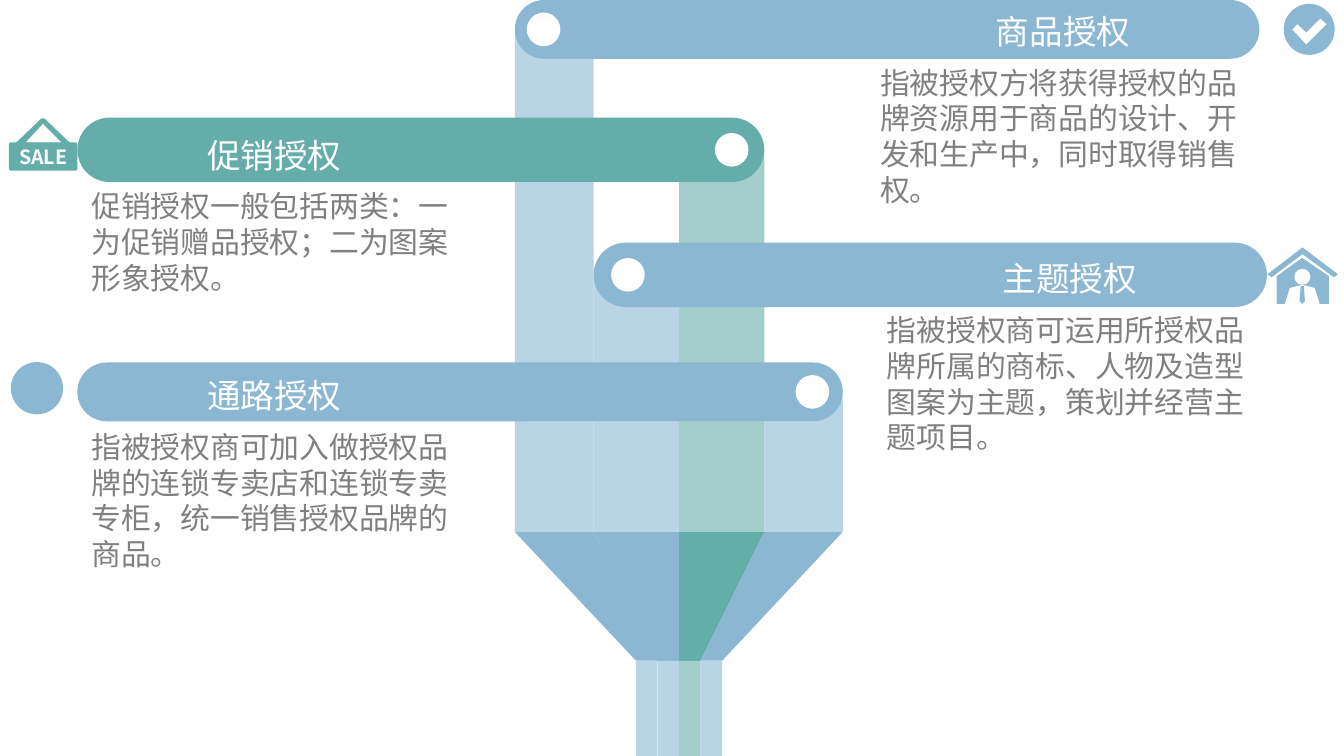
import pptx
import pptx.dml.color
import pptx.enum.shapes
import pptx.enum.text
import pptx.oxml.ns
import pptx.util
from lxml import etree

Pt = pptx.util.Pt
RGBColor = pptx.dml.color.RGBColor
KIND = pptx.enum.shapes.MSO_SHAPE
ANCHOR = pptx.enum.text.MSO_ANCHOR
ALIGN = pptx.enum.text.PP_ALIGN

BLUE = RGBColor(0x8B, 0xB7, 0xD3)
PALE_BLUE = RGBColor(0xB9, 0xD4, 0xE5)
GREEN = RGBColor(0x65, 0xAD, 0xA9)
PALE_GREEN = RGBColor(0xA3, 0xCE, 0xCB)
GREY = RGBColor(0x80, 0x80, 0x80)
WHITE = RGBColor(0xFF, 0xFF, 0xFF)
FONT = "Noto Sans CJK SC"

HEADING = {"name": FONT, "size": Pt(18)}
BODY = {"name": FONT, "size": Pt(16)}
SIGN = {"name": FONT, "size": Pt(10.5), "bold": True}

# Funnel geometry
COLUMN_EDGES = [275.8, 318, 363.8, 409.5, 451.5]
COLUMN_TOPS = [0, 130.3, 63.4, 194.4]
COLUMN_COLORS = [PALE_BLUE, PALE_BLUE, PALE_GREEN, PALE_BLUE]
MOUTH, NECK, BOTTOM = 285, 354, 405
STEM_LEFT, STEM_WIDTH = 340.7, 11.55

# Bars: left, top, width, height, color, dot left
BARS = [
    (275.8, 0, 398.9, 31.5, BLUE, 282.2),
    (41.4, 194.2, 410.1, 31.5, BLUE, 426.2),
    (41.5, 63, 368, 34.5, GREEN, 383),
    (318, 130, 360.7, 34.5, BLUE, 327.4),
]

# Sections: left, heading top, heading, description
SECTIONS = [
    (41.8, 67, "促销授权", "促销授权一般包括两类：一为促销赠品授权；二为图案形象授权。"),
    (41.8, 195.8, "通路授权",
     "指被授权商可加入做授权品牌的连锁专卖店和连锁专卖专柜，统一销售授权品牌的商品。"),
    (464.4, 0.7, "商品授权",
     "指被授权方将获得授权的品牌资源用于商品的设计、开发和生产中，同时取得销售权。"),
    (468, 133.2, "主题授权",
     "指被授权商可运用所授权品牌所属的商标、人物及造型图案为主题，策划并经营主题项目。"),
]


def paint(shape, color):
    shape.shadow.inherit = False
    shape.fill.solid()
    shape.fill.fore_color.rgb = color
    shape.line.fill.background()
    return shape


def add_preset(page, kind, left, top, width, height, color, adjustments=()):
    shape = page.shapes.add_shape(kind, Pt(left), Pt(top), Pt(width), Pt(height))
    for index, value in enumerate(adjustments):
        shape.adjustments[index] = value
    return paint(shape, color)


def add_outline(page, color, *contours):
    first, *others = [[(Pt(x), Pt(y)) for x, y in points] for points in contours]
    builder = page.shapes.build_freeform(*first[0])
    builder.add_line_segments(first[1:])
    for points in others:
        builder.move_to(*points[0])
        builder.add_line_segments(points[1:])
    return paint(builder.convert_to_shape(), color)


def write(frame, text, formats, color, align):
    para = frame.paragraphs[0]
    para.alignment = align
    span = para.add_run()
    span.text = text
    for name, value in formats.items():
        setattr(span.font, name, value)
    span.font.color.rgb = color
    # East Asian typeface
    etree.SubElement(span._r.get_or_add_rPr(), pptx.oxml.ns.qn("a:ea"), typeface=FONT)
    return para


def add_section(page, left, top, heading, description):
    height = 30.2
    box = page.shapes.add_textbox(Pt(left), Pt(top + height), Pt(210.2), Pt(44))
    box.text_frame.word_wrap = True
    para = write(box.text_frame, description, BODY, GREY, ALIGN.LEFT)
    para.line_spacing = Pt(19.2)

    box = page.shapes.add_textbox(Pt(left), Pt(top), Pt(210.2), Pt(height))
    box.text_frame.word_wrap = False
    box.text_frame.vertical_anchor = ANCHOR.BOTTOM
    write(box.text_frame, heading, HEADING, WHITE, ALIGN.CENTER)


def add_funnel(page):
    first, second, third, fourth, last = COLUMN_EDGES
    stems = [STEM_LEFT + index * STEM_WIDTH for index in range(5)]
    # Cone
    add_outline(page, GREEN, [(third, MOUTH), (fourth, MOUTH), (stems[3], NECK),
                              (third, 378)])
    add_outline(page, BLUE, [(fourth, MOUTH), (last, MOUTH), (stems[4], NECK),
                             (stems[3], NECK)])
    triangle = add_preset(page, KIND.RIGHT_TRIANGLE, second, MOUTH,
                          third - second, 93, BLUE)
    triangle.rotation = 180
    # Stems
    for left, color in zip(stems, [PALE_BLUE, PALE_BLUE, PALE_GREEN, PALE_BLUE]):
        add_preset(page, KIND.RECTANGLE, left, NECK, STEM_WIDTH, BOTTOM - NECK, color)
    add_outline(page, BLUE, [(first, MOUTH), (second, MOUTH), (stems[1], NECK),
                             (stems[0], NECK)])
    # Columns
    columns = list(zip(COLUMN_EDGES, COLUMN_EDGES[1:], COLUMN_TOPS, COLUMN_COLORS))
    for left, right, top, color in reversed(columns):
        add_preset(page, KIND.ROUND_2_SAME_RECTANGLE, left, top, right - left,
                   MOUTH - top, color, (0.5, 0))


def add_bars(page):
    for left, top, width, height, color, _ in BARS:
        add_preset(page, KIND.ROUNDED_RECTANGLE, left, top, width, height, color, (0.5,))
    for _, top, _, height, _, dot_left in BARS:
        add_preset(page, KIND.OVAL, dot_left, top + height / 2 - 9, 18, 18, WHITE)


def add_sale_sign(page):
    add_outline(page, GREEN,
                [(7, 78), (22.2, 63.4), (23.8, 63.4), (39, 78)],
                [(13.6, 76.4), (33, 76.4), (23, 66.3)])
    board = add_preset(page, KIND.ROUNDED_RECTANGLE, 4.8, 76.3, 36.7, 15.2, GREEN, (0.08,))
    frame = board.text_frame
    for side in ("left", "top", "right", "bottom"):
        setattr(frame, "margin_" + side, 0)
    frame.word_wrap = False
    frame.vertical_anchor = ANCHOR.MIDDLE
    write(frame, "SALE", SIGN, WHITE, ALIGN.CENTER)


def add_check(page):
    add_preset(page, KIND.OVAL, 687.7, 2.1, 27.3, 27.3, BLUE)
    add_outline(page, WHITE, [(692.4, 15.8), (695, 13), (699.8, 17.4), (707.4, 10),
                              (710.6, 13), (699.8, 23.8)])


def add_house(page):
    # Walls and roof
    add_outline(page, BLUE, [(684, 148), (697.6, 138.2), (712, 148), (712, 162.8),
                             (684, 162.8)])
    add_outline(page, BLUE, [(679, 147), (697.8, 132.6), (716.8, 147), (714.6, 148.6),
                             (697.8, 136.2), (681.2, 148.6)])
    # Person with tie
    add_preset(page, KIND.OVAL, 693.4, 144, 8.6, 8.6, WHITE)
    add_outline(page, WHITE, [(688.3, 162.8), (691, 154.3), (697.7, 152.6),
                              (704.3, 154.3), (707, 162.8)])
    add_outline(page, BLUE, [(696.9, 153.2), (698.6, 153.2), (699.1, 161.3),
                             (697.7, 162.8), (696.2, 161.3)])


def main():
    deck = pptx.Presentation()
    deck.slide_width, deck.slide_height = Pt(720), Pt(405)
    page = deck.slides.add_slide(deck.slide_layouts[6])

    add_funnel(page)
    add_bars(page)

    # Icons
    add_sale_sign(page)
    add_check(page)
    add_house(page)
    add_preset(page, KIND.OVAL, 5.8, 194, 28, 28, BLUE)

    for section in SECTIONS:
        add_section(page, *section)
    deck.save("out.pptx")


if __name__ == "__main__":
    main()
